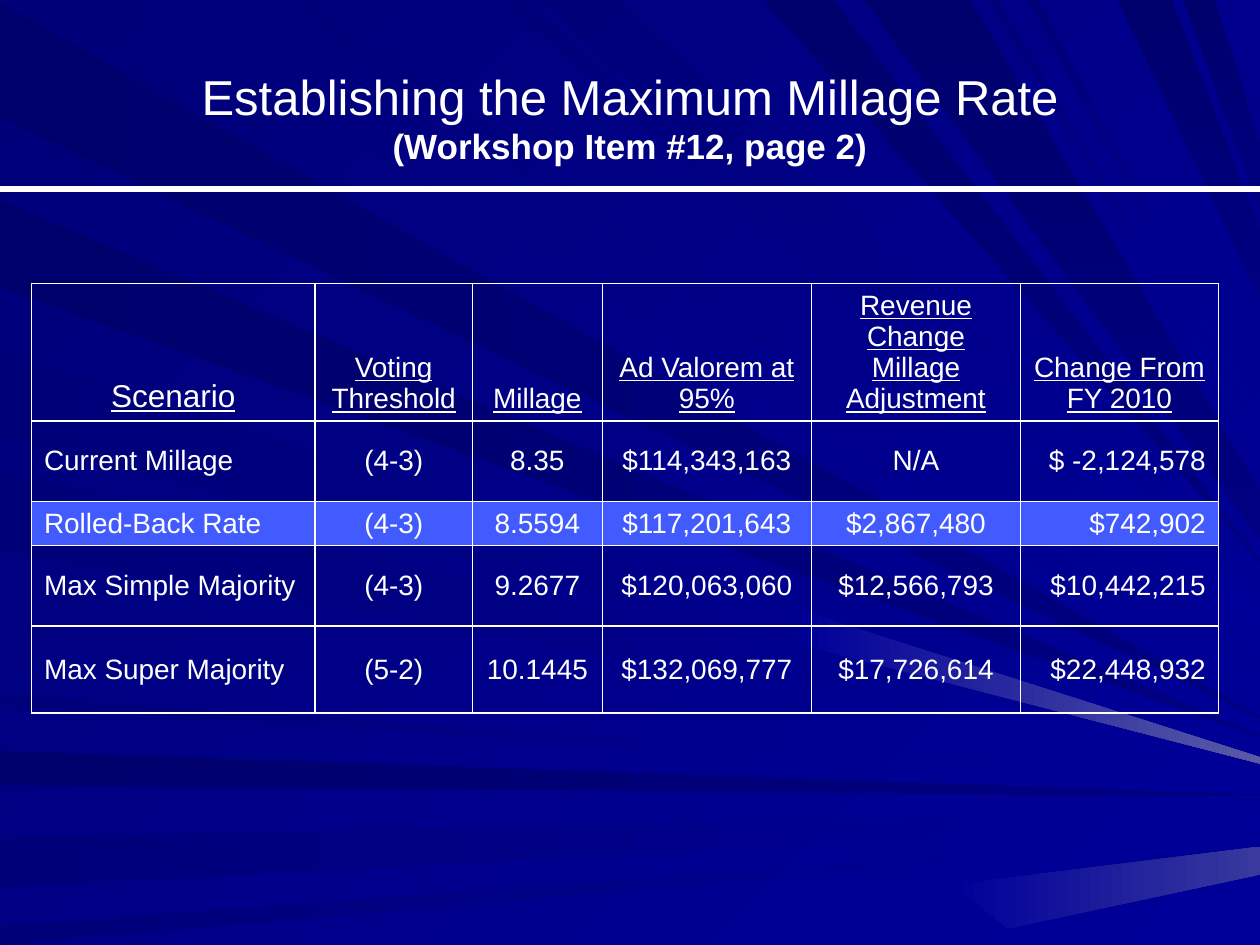
import pptx
import pptx.util
from lxml import etree
from pptx.dml.color import RGBColor
from pptx.enum.shapes import MSO_CONNECTOR
from pptx.enum.text import MSO_ANCHOR, MSO_AUTO_SIZE, PP_ALIGN
from pptx.oxml.ns import qn

Inches, Pt = pptx.util.Inches, pptx.util.Pt
W, H = 10, 7.5
FONT = "Arial"
WHITE = RGBColor(0xFF, 0xFF, 0xFF)
HIGHLIGHT = RGBColor(0x42, 0x5B, 0xFF)
SHADE = RGBColor(0x00, 0x00, 0x6D)
DUSK = RGBColor(0x00, 0x00, 0x78)
NAVY = RGBColor(0x00, 0x00, 0x80)
ROYAL = RGBColor(0x00, 0x00, 0x85)
BLUE = RGBColor(0x00, 0x00, 0x99)
HAZE = RGBColor(0x5A, 0x5A, 0xA6)
HAZE_DARK = RGBColor(0x39, 0x39, 0x9E)

# Rays run to the right edge: start from, start to, end from, end to
DARK_TOP_RAYS = [(6.06, 6.61, 4.46, 4.45), (6.86, 7.7, 4.28, 3.9),
                 (8.87, 9.3, 2.37, 1.83), (9.39, 9.64, 1.67, 1.14)]
LIGHT_TOP_RAYS = [(0.26, 1.01, 5.63, 5.62), (2.25, 2.47, 5.52, 5.47), (3.98, 4.16, 5.21, 5.15),
                  (4.26, 4.92, 5.07, 4.79), (7.85, 7.92, 3.6, 3.54), (8.15, 8.24, 3.36, 3.35)]
DARK_LEFT_RAYS = [(0.02, 0.93, 5.69, 5.7), (1.59, 2.28, 5.84, 5.85), (5.96, 6.23, 6.31, 6.32)]
LIGHT_LEFT_RAYS = [(2.78, 3.42, 5.96, 6.02), (3.74, 4.37, 6.05, 6.06), (5.52, 5.6, 6.21, 6.23),
                   (6.65, 7.04, 6.43, 6.51), (7.35, 7.5, 6.62, 6.63), (2.83, 3.47, 6.01, 6.06)]
HAZE_RAY = [(6.37, 4.85), (W, 6.01), (W, 6.06), (6.33, 5.11)]
HAZE_PATCH = [(7.56, 7.02), (W, 6.72), (W, 6.94), (8, 7.37)]

COLUMNS = [2.25, 1.25, 1.03, 1.66, 1.66, 1.57]
ROW_HEIGHTS = [1.09, 0.64, 0.35, 0.64, 0.69]
HIGHLIGHT_ROW = 2
ALIGN = [PP_ALIGN.LEFT] + [PP_ALIGN.CENTER] * 4 + [PP_ALIGN.RIGHT]
SCENARIOS = [
    ["Scenario", "Voting Threshold", "Millage", "Ad Valorem at 95%",
     "Revenue Change Millage Adjustment", "Change From\nFY 2010"],
    ["Current Millage", "(4-3)", "8.35", "$114,343,163", "N/A", "$ -2,124,578"],
    ["Rolled-Back Rate", "(4-3)", "8.5594", "$117,201,643", "$2,867,480", "$742,902"],
    ["Max Simple Majority", "(4-3)", "9.2677", "$120,063,060", "$12,566,793", "$10,442,215"],
    ["Max Super Majority", "(5-2)", "10.1445", "$132,069,777", "$17,726,614", "$22,448,932"],
]


def set_gradient(fill, start, end, angle):
    fill.gradient()
    fill.gradient_angle = (360 - angle) % 360
    for stop, color in zip(fill.gradient_stops, (start, end)):
        stop.color.rgb = color


def set_font(r, size, bold=False, underline=False):
    r.font.name, r.font.size = FONT, Pt(size)
    r.font.bold, r.font.underline = bold, underline
    r.font.color.rgb = WHITE


def add_ray(s, corners, start, end, angle):
    points = [(Inches(x), Inches(y)) for x, y in corners]
    builder = s.shapes.build_freeform(*points[0], scale=1.0)
    builder.add_line_segments(points[1:], close=True)
    sp = builder.convert_to_shape()
    sp.shadow.inherit = False
    sp.line.fill.background()
    set_gradient(sp.fill, start, end, angle)
    return sp


def add_background(s):
    set_gradient(s.background.fill, DUSK, BLUE, 45)
    rays = []
    for bands, start, end, angle in ((DARK_LEFT_RAYS, SHADE, NAVY, 0),
                                     (LIGHT_LEFT_RAYS, DUSK, BLUE, 0)):
        for a, b, c, d in bands:
            rays.append(add_ray(s, [(0, a), (W, c), (W, d), (0, b)], start, end, angle))
    for bands, start, end, angle in ((LIGHT_TOP_RAYS, DUSK, BLUE, 45),
                                     (DARK_TOP_RAYS, SHADE, NAVY, 90)):
        for a, b, c, d in bands:
            rays.append(add_ray(s, [(a, 0), (W, c), (W, d), (b, 0)], start, end, angle))
    rays.append(add_ray(s, HAZE_RAY, BLUE, HAZE, 0))
    rays.append(add_ray(s, HAZE_PATCH, BLUE, HAZE_DARK, 0))
    # Keep the rays behind the title
    group = s.shapes.add_group_shape(shapes=rays)
    s.shapes.element.insert(2, group.element)


def add_title(s, x, y, w, h):
    title = s.shapes.title
    title.left, title.top, title.width, title.height = map(Inches, (x, y, w, h))
    tf = title.text_frame
    tf.word_wrap, tf.auto_size = True, MSO_AUTO_SIZE.NONE
    tf.vertical_anchor = MSO_ANCHOR.MIDDLE
    p = tf.paragraphs[0]
    p.text = "Establishing the Maximum Millage Rate\v(Workshop Item #12, page 2)"
    p.alignment = PP_ALIGN.CENTER
    heading, subheading = p.runs
    set_font(heading, 28)
    set_font(subheading, 20, bold=True)


def add_rule(s, y):
    line = s.shapes.add_connector(MSO_CONNECTOR.STRAIGHT, 0, Inches(y), Inches(W), Inches(y))
    line.line.color.rgb, line.line.width = WHITE, Pt(3)
    etree.SubElement(line.element.spPr, qn("a:effectLst"))


def set_borders(cell):
    tcPr = cell._tc.get_or_add_tcPr()
    for i, side in enumerate(("a:lnL", "a:lnR", "a:lnT", "a:lnB")):
        ln = etree.Element(qn(side), w=str(Pt(1)))
        fill = etree.SubElement(ln, qn("a:solidFill"))
        etree.SubElement(fill, qn("a:srgbClr"), val=str(WHITE))
        tcPr.insert(i, ln)


def format_cell(cell, row, col):
    header = row == 0
    cell.text = SCENARIOS[row][col]
    cell.vertical_anchor = MSO_ANCHOR.BOTTOM if header else MSO_ANCHOR.MIDDLE
    if row == HIGHLIGHT_ROW:
        cell.fill.solid()
        cell.fill.fore_color.rgb = HIGHLIGHT
    else:
        cell.fill.background()
    set_borders(cell)
    for p in cell.text_frame.paragraphs:
        p.alignment = PP_ALIGN.CENTER if header else ALIGN[col]
        for r in p.runs:
            set_font(r, 18 if header and col == 0 else 16, underline=header)


def add_scenarios(s, x, y):
    table = s.shapes.add_table(len(ROW_HEIGHTS), len(COLUMNS), Inches(x), Inches(y),
                               Inches(sum(COLUMNS)), Inches(sum(ROW_HEIGHTS))).table
    table.first_row = table.horz_banding = False
    for column, width in zip(table.columns, COLUMNS):
        column.width = Inches(width)
    for i, height in enumerate(ROW_HEIGHTS):
        table.rows[i].height = Inches(height)
        for j in range(len(COLUMNS)):
            format_cell(table.cell(i, j), i, j)


def main():
    prs = pptx.Presentation()
    prs.slide_width, prs.slide_height = Inches(W), Inches(H)
    s = prs.slides.add_slide(prs.slide_layouts[5])
    add_background(s)
    add_title(s, 0.05 * W, 0.04 * H, 0.9 * W, H / 6)
    add_scenarios(s, 0.025 * W, 0.3 * H)
    add_rule(s, 0.2 * H)
    prs.save("out.pptx")


if __name__ == "__main__":
    main()
